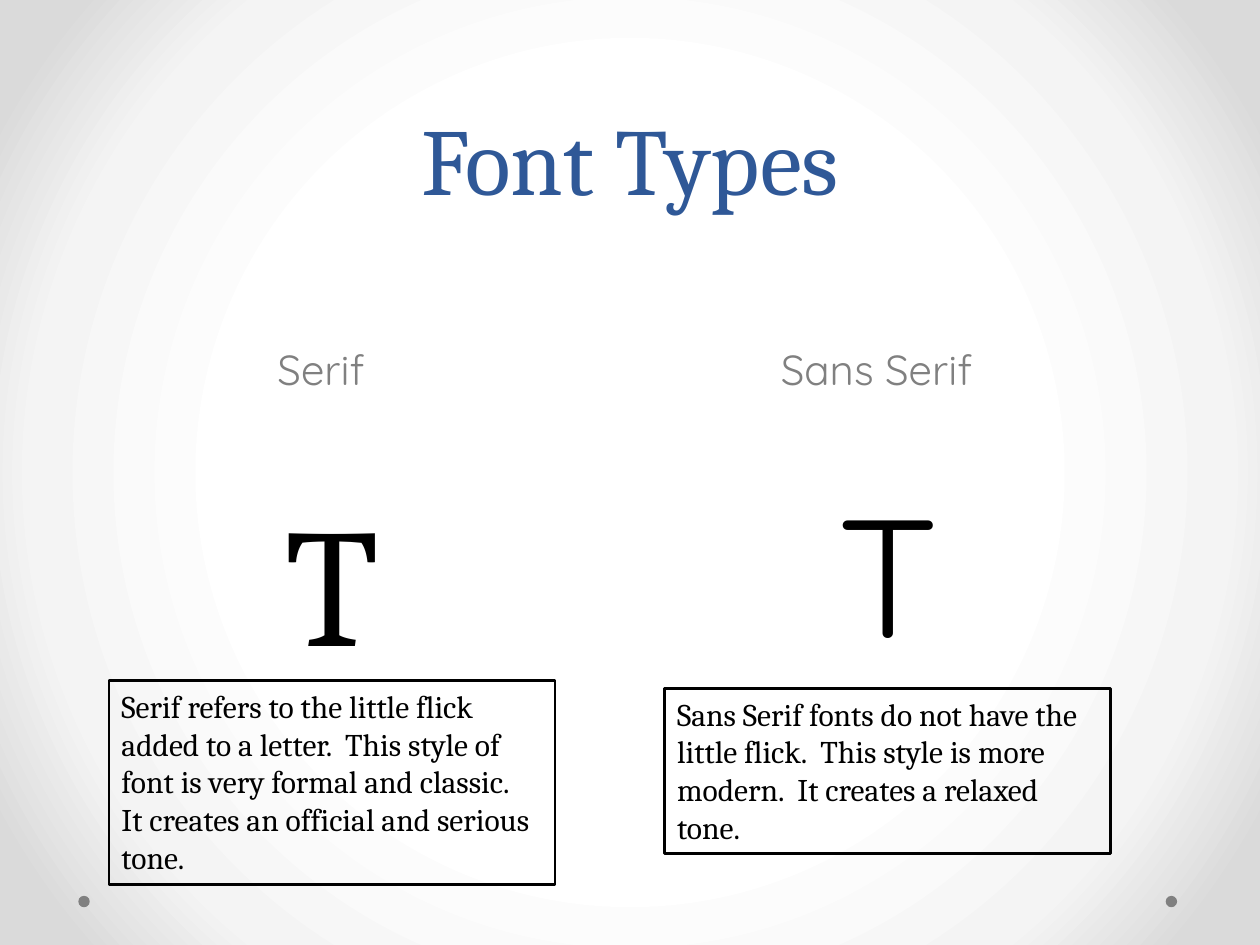
from lxml import etree
from pptx import Presentation
from pptx.dml.color import RGBColor
from pptx.enum.shapes import MSO_SHAPE
from pptx.enum.text import MSO_ANCHOR, PP_ALIGN
from pptx.oxml.ns import qn
from pptx.util import Cm, Pt

CENTER, LEFT = PP_ALIGN.CENTER, PP_ALIGN.LEFT
TOP, BOTTOM = MSO_ANCHOR.TOP, MSO_ANCHOR.BOTTOM
RECTANGLE, OVAL = MSO_SHAPE.RECTANGLE, MSO_SHAPE.OVAL
SERIF, SANS = "Cambria", "Quicksand"
BLUE, GRAY, BLACK = "2F5897", "808080", "000000"

# Content: positions in cm as left, top, width, height
TITLE = "Font Types"
TITLE_BOX = (1.27, 0, 22.86, 4.45)
HEADINGS = [
    ("Serif", (1.97, 6.81, 9, 1.32)),
    ("Sans Serif", (13.17, 6.81, 9, 1.32)),
]
SAMPLES = [
    (SERIF, (4.5, 9.53, 4.39, 4.37)),
    (SANS, (15.71, 9.37, 4.39, 4.37)),
]
DESCRIPTIONS = [
    ("Serif refers to the little flick added to a letter.  This style of font is "
     "very formal and classic.  It creates an official and serious tone.",
     (2.2, 13.72, 8.99, 4.11)),
    ("Sans Serif fonts do not have the little flick.  This style is more modern.  "
     "It creates a relaxed tone.",
     (13.4, 13.88, 8.99, 3.33)),
]
DOT_LEFTS, DOT_TOP, DOT_SIZE = (23.5, 1.58), 18.06, 0.23
BACKGROUND_STOPS = [(50, "FFFFFF"), (76, "F4F4F4"), (92, "DADADA")]


def color(value):
    return RGBColor.from_string(value)


def place(box):
    return [Cm(length) for length in box]


def add_shape(slide, preset, box, fill=None, line=None):
    shape = slide.shapes.add_shape(preset, *place(box))
    shape.shadow.inherit = False
    if fill:
        shape.fill.solid()
        shape.fill.fore_color.rgb = color(fill)
    else:
        shape.fill.background()
    if line:
        shape.line.color.rgb = color(line)
        shape.line.width = Pt(1.5)
    else:
        shape.line.fill.background()
    return shape


def write(shape, text, font, size, ink, align=CENTER, anchor=TOP):
    frame = shape.text_frame
    frame.word_wrap = True
    frame.vertical_anchor = anchor
    paragraph = frame.paragraphs[0]
    paragraph.alignment = align
    run = paragraph.add_run()
    run.text = text
    run.font.name = font
    run.font.size = Pt(size)
    run.font.color.rgb = color(ink)
    return paragraph


def add_text(slide, box, *args, **kwargs):
    return write(slide.shapes.add_textbox(*place(box)), *args, **kwargs)


def set_radial_background(slide, stops):
    slide.background.fill.gradient()
    gradient = next(slide.element.iter(qn("a:gradFill")))
    for child in list(gradient):
        gradient.remove(child)
    stop_list = etree.SubElement(gradient, qn("a:gsLst"))
    for position, value in stops:
        stop = etree.SubElement(stop_list, qn("a:gs"), pos=str(position * 1000))
        etree.SubElement(stop, qn("a:srgbClr"), val=value)
    circle = etree.SubElement(gradient, qn("a:path"), path="circle")
    etree.SubElement(circle, qn("a:fillToRect"),
                     {side: "50000" for side in "ltrb"})


def main():
    presentation = Presentation()
    presentation.slide_width, presentation.slide_height = Cm(25.4), Cm(19.05)
    slide = presentation.slides.add_slide(presentation.slide_layouts[6])

    # Background and corner dots
    set_radial_background(slide, BACKGROUND_STOPS)
    for left in DOT_LEFTS:
        add_shape(slide, OVAL, (left, DOT_TOP, DOT_SIZE, DOT_SIZE), fill=GRAY)

    # Title
    paragraph = add_text(slide, TITLE_BOX, TITLE, SERIF, 54, BLUE, anchor=BOTTOM)
    paragraph.line_spacing = Pt(58)

    # Column headings
    for text, box in HEADINGS:
        add_text(slide, box, text, SANS, 24, GRAY)

    # Sample letters
    for font, box in SAMPLES:
        add_text(slide, box, "T", font, 96, BLACK)

    # Framed descriptions
    for text, box in DESCRIPTIONS:
        frame = add_shape(slide, RECTANGLE, box, line=BLACK)
        write(frame, text, SERIF, 18, BLACK, align=LEFT)

    presentation.save("out.pptx")


if __name__ == "__main__":
    main()
